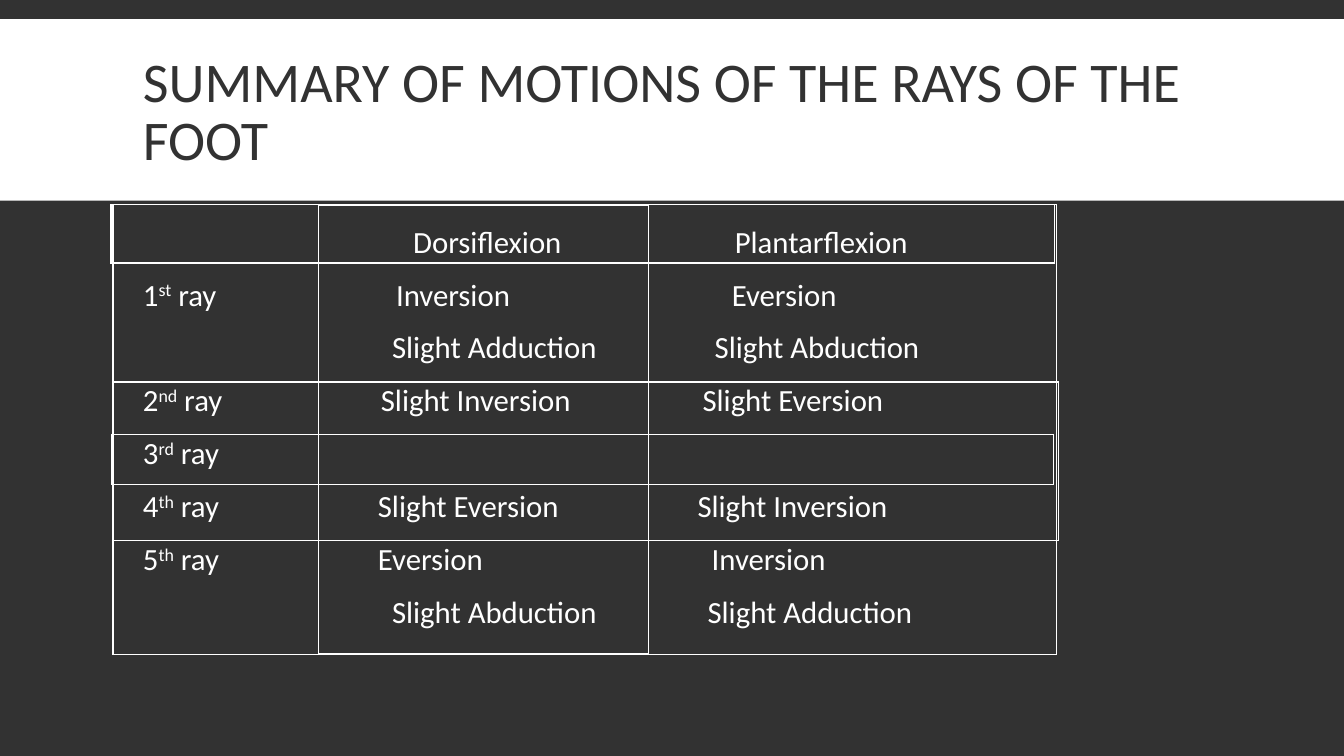
from dataclasses import dataclass

from lxml.etree import SubElement
from pptx import Presentation
from pptx.dml.color import RGBColor as RGB
from pptx.enum.shapes import MSO_SHAPE as SHAPE
from pptx.enum.text import MSO_ANCHOR as ANCHOR
from pptx.oxml import parse_xml
from pptx.oxml.ns import nsdecls, qn
from pptx.slide import Slide
from pptx.text.text import TextFrame, _Paragraph as Paragraph
from pptx.util import Inches, Pt


@dataclass(frozen=True)
class Theme:
    dark: RGB = RGB(0x32, 0x32, 0x32)
    white: RGB = RGB(0xFF, 0xFF, 0xFF)
    font: str = "Calibri"
    title_size: int = 40
    body_size: int = 22
    border: int = 1


@dataclass(frozen=True)
class Box:
    left: float
    top: float
    width: float
    height: float

    def emu(self) -> tuple[int, ...]:
        return tuple(Inches(v) for v in (self.left, self.top, self.width, self.height))


@dataclass(frozen=True)
class MotionLine:
    dorsiflexion: str = ""
    plantarflexion: str = ""
    tabs: tuple[float, ...] = ()
    ray: str = ""
    ordinal: str = ""


THEME = Theme()
BAND = Box(0, 0.19, 13.33, 1.8)
TITLE = Box(1.32, 0.31, 10.7, 1.65)
BODY = Box(1.32, 2.2, 10.7, 4.6)
FRAMES = (
    Box(1.12, 2.03, 9.36, 4.46),
    Box(1.12, 3.79, 9.38, 1.57),
    Box(1.11, 4.31, 9.34, 0.5),
    Box(3.16, 2.04, 3.27, 4.44),
    Box(1.1, 2.03, 9.36, 0.58),
)
LINES = (
    MotionLine("Dorsiflexion", "Plantarflexion", (2.68, 5.87)),
    MotionLine("Inversion", "Eversion", (2.51, 5.84), "1", "st"),
    MotionLine("Slight Adduction", "Slight Abduction", (2.47, 5.67)),
    MotionLine("Slight Inversion", "Slight Eversion", (2.36, 5.55), "2", "nd"),
    MotionLine(ray="3", ordinal="rd"),
    MotionLine("Slight Eversion", "Slight Inversion", (2.33, 5.5), "4", "th"),
    MotionLine("Eversion", "Inversion", (2.33, 5.64), "5", "th"),
    MotionLine("Slight Abduction", "Slight Adduction", (2.47, 5.6)),
)


def add_text_frame(s: Slide, box: Box, anchor: ANCHOR) -> TextFrame:
    tf = s.shapes.add_textbox(*box.emu()).text_frame
    tf.word_wrap = True
    tf.vertical_anchor = anchor
    return tf


def add_run(p: Paragraph, text: str, size: int, color: RGB, raised: bool = False) -> None:
    r = p.add_run()
    r.text = text
    r.font.name = THEME.font
    r.font.size = Pt(size)
    r.font.color.rgb = color
    if raised:
        r.font._element.set("baseline", "30000")


def add_band(s: Slide) -> None:
    sp = s.shapes.add_shape(SHAPE.RECTANGLE, *BAND.emu())
    sp.shadow.inherit = False
    sp.fill.solid()
    sp.fill.fore_color.rgb = THEME.white
    sp.line.fill.background()


def add_title(s: Slide) -> None:
    p = add_text_frame(s, TITLE, ANCHOR.MIDDLE).paragraphs[0]
    p.line_spacing = 0.85
    add_run(p, "SUMMARY OF MOTIONS OF THE RAYS OF THE FOOT", THEME.title_size, THEME.dark)


def set_tabs(p: Paragraph, tabs: tuple[float, ...]) -> None:
    tab_list = SubElement(p._p.get_or_add_pPr(), qn("a:tabLst"))
    for tab in tabs:
        SubElement(tab_list, qn("a:tab"), pos=str(Inches(tab)), algn="l")


def add_motions(s: Slide) -> None:
    tf = add_text_frame(s, BODY, ANCHOR.TOP)
    for i, line in enumerate(LINES):
        p = tf.add_paragraph() if i else tf.paragraphs[0]
        p.line_spacing = 0.9
        p.space_before = Pt(12)
        p.space_after = Pt(2)
        if line.tabs:
            set_tabs(p, line.tabs)
        if line.ray:
            add_run(p, line.ray, THEME.body_size, THEME.white)
            add_run(p, line.ordinal, THEME.body_size, THEME.white, raised=True)
            add_run(p, " ray", THEME.body_size, THEME.white)
        for motion in (line.dorsiflexion, line.plantarflexion):
            if motion:
                add_run(p, f"\t{motion}", THEME.body_size, THEME.white)


def add_frame(s: Slide, box: Box) -> None:
    table = s.shapes.add_table(1, 1, *box.emu()).table
    table.first_row = False
    table.horz_banding = False
    cell = table.cell(0, 0)
    cell.fill.background()
    tc_pr = cell._tc.get_or_add_tcPr()
    for i, side in enumerate("LRTB"):
        tc_pr.insert(i, parse_xml(
            f'<a:ln{side} {nsdecls("a")} w="{Pt(THEME.border)}"><a:solidFill>'
            f'<a:srgbClr val="{THEME.white}"/></a:solidFill></a:ln{side}>'
        ))


def main() -> None:
    prs = Presentation()
    prs.slide_width = Inches(13.33)
    prs.slide_height = Inches(7.5)
    s = prs.slides.add_slide(prs.slide_layouts[6])
    s.background.fill.solid()
    s.background.fill.fore_color.rgb = THEME.dark
    add_band(s)
    add_title(s)
    add_motions(s)
    for box in FRAMES:
        add_frame(s, box)
    prs.save("out.pptx")


if __name__ == "__main__":
    main()
